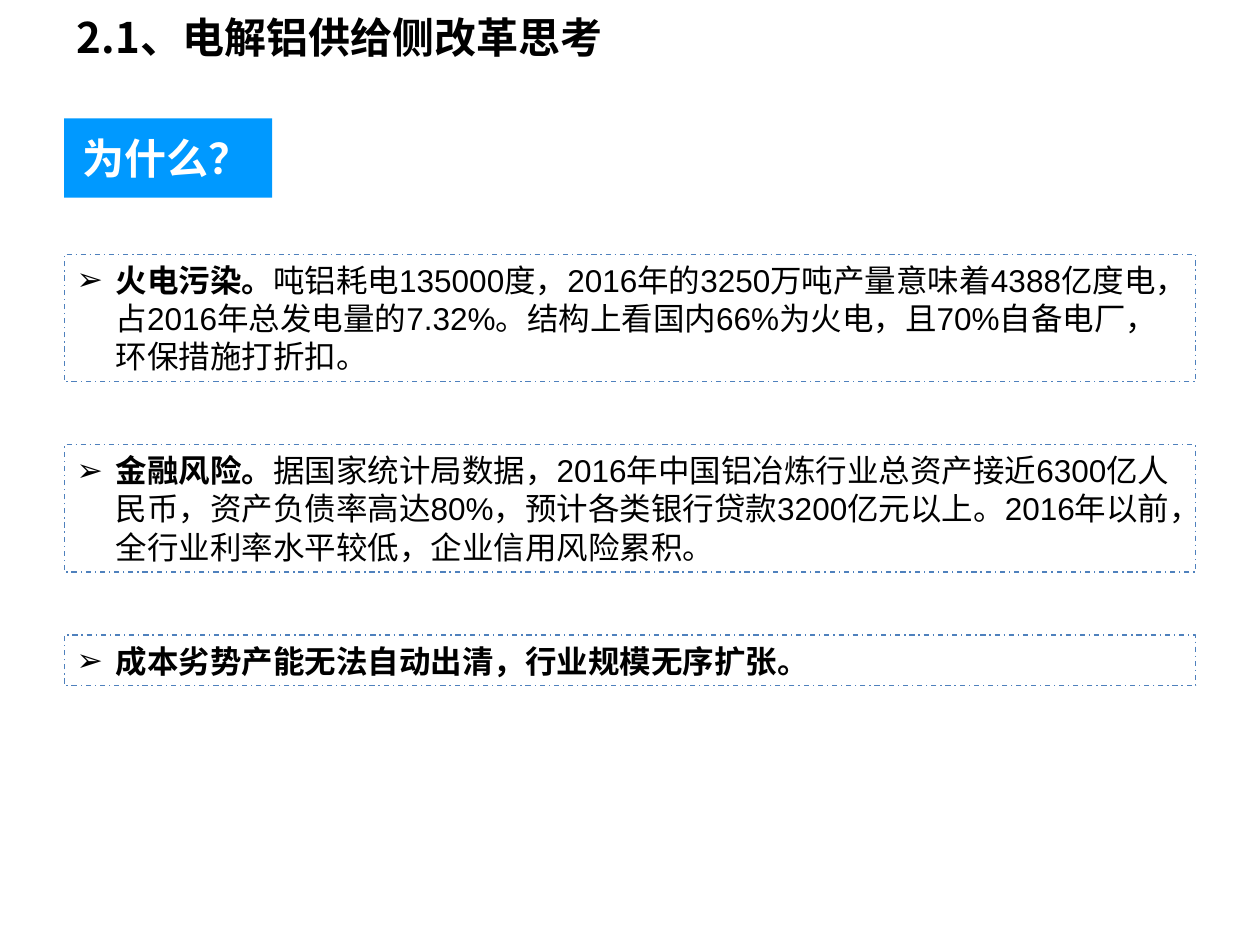
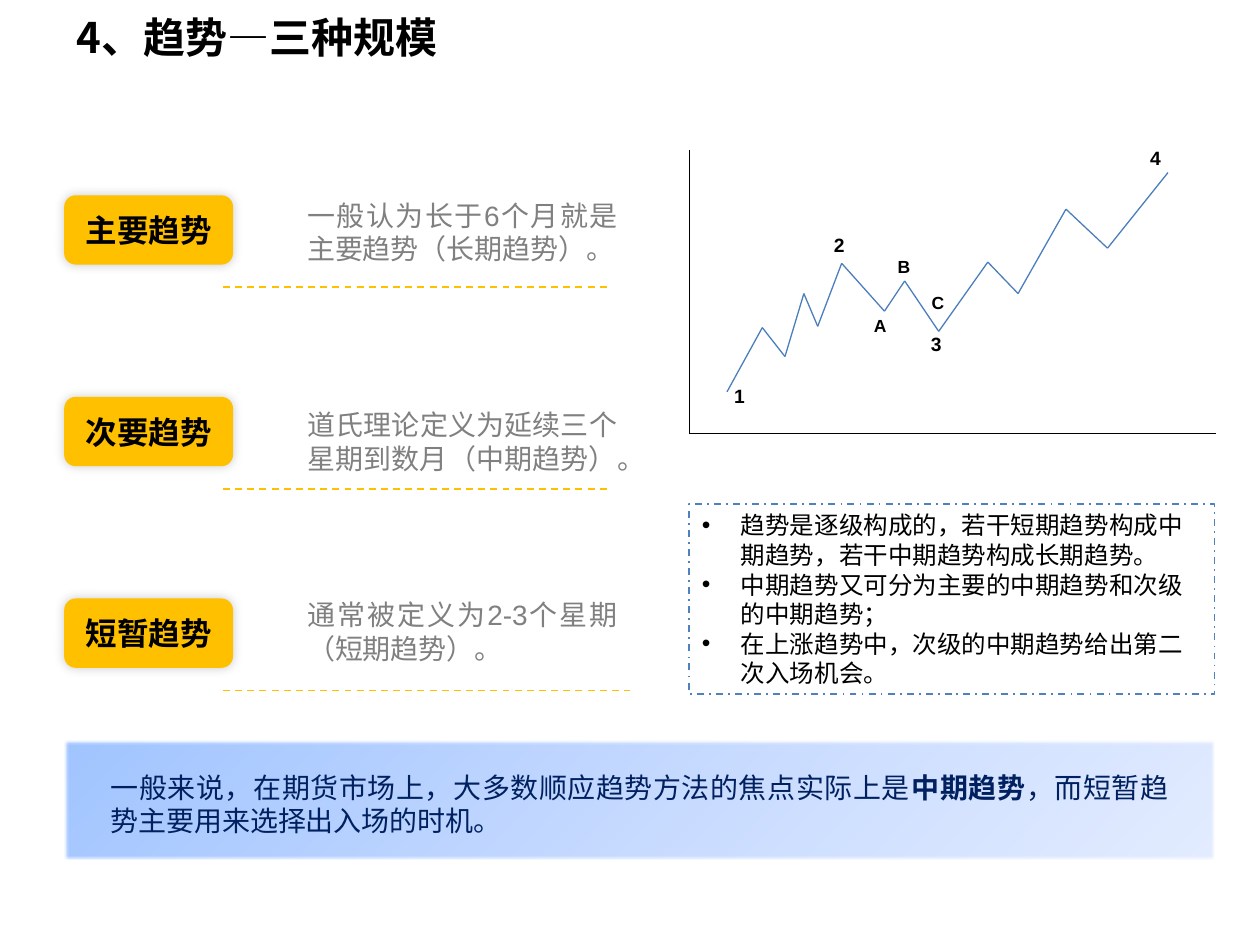
from dataclasses import dataclass
from itertools import pairwise

from lxml import etree
from pptx import Presentation
from pptx import util as u
from pptx.dml.color import RGBColor
from pptx.enum import dml, shapes, text
from pptx.oxml import ns

SCALE = 9144


@dataclass(frozen=True)
class Theme:
    """Colours, fonts and type sizes shared by the slides."""
    black: str = "000000"
    white: str = "FFFFFF"
    gray: str = "808080"
    navy: str = "002060"
    tag_blue: str = "0099FF"
    border_blue: str = "4F81BD"
    trend_blue: str = "4B7EBC"
    amber: str = "FFC000"
    gradient: tuple = ((0, "A0C4FF"), (50, "C5D9FF"), (100, "E3ECFF"))
    latin: str = "Arial"
    button: str = "Calibri"
    chinese: str = "Noto Sans CJK SC"
    title_size: int = 24
    heading_size: int = 18
    body_size: int = 16
    list_size: int = 14
    point_size: int = 11
    wave_size: int = 10
    leading: float = 1.21


THEME = Theme()
TITLE_BOX = (51, 10, 748, 39)


def px(*lengths):
    """Turn px lengths into EMU."""
    return [u.Emu(length * SCALE) for length in lengths]


def child(parent, tag, **attributes):
    """Append a DrawingML element to a parent."""
    return etree.SubElement(parent, ns.qn(tag), {key: str(value) for key, value in attributes.items()})


def write_text(frame, *paragraphs, size, color=THEME.black, font=THEME.latin, bold=False,
               align=text.PP_ALIGN.LEFT, anchor=text.MSO_ANCHOR.TOP, bullet=None,
               leading=THEME.leading, space_after=0, wrap=True):
    """Fill a text frame; parts between ** marks switch boldness."""
    frame.word_wrap = wrap
    frame.auto_size = text.MSO_AUTO_SIZE.NONE
    frame.vertical_anchor = anchor
    for index, content in enumerate(paragraphs):
        paragraph = frame.add_paragraph() if index else frame.paragraphs[0]
        if bullet:
            properties = paragraph._p.get_or_add_pPr()
            indent = 31 * SCALE
            properties.set("marL", str(indent))
            properties.set("indent", str(-indent))
            child(properties, "a:buFont", typeface=THEME.latin)
            child(properties, "a:buChar", char=bullet)
        paragraph.alignment = align
        paragraph.space_before = u.Pt(0)
        paragraph.space_after = u.Pt(space_after)
        if leading:
            paragraph.line_spacing = u.Pt(round(size * leading, 1))
        for position, part in enumerate(content.split("**")):
            if not part:
                continue
            run = paragraph.add_run()
            run.text = part
            run.font.size = u.Pt(size)
            run.font.name = font
            run.font.bold = bold != bool(position % 2)
            run.font.color.rgb = RGBColor.from_string(color)
            child(run._r.get_or_add_rPr(), "a:ea", typeface=THEME.chinese)


def set_line(line, color, width, dash=None):
    """Format an outline or a connector line."""
    line.color.rgb = RGBColor.from_string(color)
    line.width = u.Pt(width)
    if dash:
        line.dash_style = dash


def add_box(parent, box, kind=shapes.MSO_SHAPE.RECTANGLE, fill=None):
    """Add a preset shape without outline or shadow."""
    shape = parent.shapes.add_shape(kind, *px(*box))
    shape.shadow.inherit = False
    shape.line.fill.background()
    if fill:
        shape.fill.solid()
        shape.fill.fore_color.rgb = RGBColor.from_string(fill)
    else:
        shape.fill.background()
    return shape


def add_label(parent, box, *paragraphs, **style):
    """Add a text box."""
    shape = parent.shapes.add_textbox(*px(*box))
    write_text(shape.text_frame, *paragraphs, **style)


def add_path(parent, points, color, width, dash=None):
    """Join successive points with straight connectors."""
    for start, end in pairwise(points):
        connector = parent.shapes.add_connector(shapes.MSO_CONNECTOR.STRAIGHT, *px(*start, *end))
        set_line(connector.line, color, width, dash)
        child(connector._element.spPr, "a:effectLst")


def add_slide(presentation, layout, title):
    """Add a slide with the shared title style."""
    slide = presentation.slides.add_slide(presentation.slide_layouts[layout])
    shape = slide.shapes.title
    shape.left, shape.top, shape.width, shape.height = px(*TITLE_BOX)
    write_text(shape.text_frame, title, size=THEME.title_size, font=THEME.chinese, bold=True,
               anchor=text.MSO_ANCHOR.MIDDLE, leading=None)
    return slide


def question_tag(slide, box):
    """Draw the blue question tag."""
    left, top, width, height = box
    group = slide.shapes.add_group_shape()
    add_box(group, box, fill=THEME.tag_blue)
    add_label(group, (left + 5, top + 6, width - 9, height - 13), "为什么？",
              size=THEME.title_size, color=THEME.white, bold=True, wrap=False)


def reason_panels(slide, box, reasons, gap=50):
    """Stack the dashed panels, one for each reason."""
    left, top, width = box
    for height, reason in reasons:
        panel = add_box(slide, (left, top, width, height))
        set_line(panel.line, THEME.border_blue, 0.75, dml.MSO_LINE.DASH_DOT)
        write_text(panel.text_frame, reason, size=THEME.heading_size, bullet="➢", space_after=12)
        top += height + gap


def trend_row(slide, box, name, description, text_shift, rule_length):
    """Draw a trend button, its description and the dashed rule below."""
    left, top, width, height = box
    button = add_box(slide, box, shapes.MSO_SHAPE.ROUNDED_RECTANGLE, THEME.amber)
    effects = button._element.spPr.find(ns.qn("a:effectLst"))
    shadow = child(effects, "a:outerShdw", blurRad=u.Pt(6), dist=0, dir=315 * 60000)
    child(child(shadow, "a:srgbClr", val=THEME.black), "a:alpha", val=20000)
    write_text(button.text_frame, name, size=THEME.heading_size, font=THEME.button, bold=True,
               align=text.PP_ALIGN.CENTER, anchor=text.MSO_ANCHOR.MIDDLE)
    rule_left, rule_top = left + 126, top + height + 18
    add_path(slide, [(rule_left, rule_top), (rule_left + rule_length, rule_top)],
             THEME.amber, 1, dml.MSO_LINE.DASH)
    add_label(slide, (left + 183, top + text_shift, 266, 64), description,
              size=THEME.body_size, color=THEME.gray, align=text.PP_ALIGN.JUSTIFY)


def trend_sketch(slide, box):
    """Draw the axes, the zigzag trend and its turning point labels."""
    left, top, width, height = box
    group = slide.shapes.add_group_shape()
    zigzag = [(30, 192), (58, 141), (76, 164), (91, 114), (102, 140), (121, 90), (155, 128),
              (171, 104), (198, 144), (237, 89), (261, 114), (299, 47), (332, 78), (380, 18)]
    add_path(group, [(left, top), (left, top + height), (left + width, top + height)], THEME.black, 0.75)
    add_path(group, [(left + x, top + y) for x, y in zigzag], THEME.trend_blue, 0.75)
    points = [("4", 353, -8), ("2", 102, 61), ("3", 179, 140), ("1", 23, 181)]
    waves = [("A", 133, 126), ("B", 152, 79), ("C", 179, 108)]
    for labels, label_box, size in ((points, (34, 31), THEME.point_size), (waves, (37, 29), THEME.wave_size)):
        for label, x, y in labels:
            add_label(group, (left + x, top + y, *label_box), label, size=size, bold=True,
                      align=text.PP_ALIGN.CENTER, leading=None)


def trend_notes(slide, box, notes):
    """Place the bulleted notes in the body placeholder."""
    body = slide.placeholders[1]
    body.left, body.top, body.width, body.height = px(*box)
    set_line(body.line, THEME.border_blue, 1, dml.MSO_LINE.DASH_DOT)
    write_text(body.text_frame, *notes, size=THEME.list_size, bullet="•")


def summary_band(slide, box, summary):
    """Draw the gradient band with the closing remark."""
    left, top, width, height = box
    band = add_box(slide, box)
    properties = band._element.spPr
    gradient = etree.Element(ns.qn("a:gradFill"), rotWithShape="1")
    stops = child(gradient, "a:gsLst")
    for position, color in THEME.gradient:
        child(child(stops, "a:gs", pos=position * 1000), "a:srgbClr", val=color)
    child(gradient, "a:lin", ang=45 * 60000, scaled=0)
    properties.replace(properties.find(ns.qn("a:noFill")), gradient)
    child(properties.find(ns.qn("a:effectLst")), "a:softEdge", rad=u.Pt(1))
    add_label(slide, (left + 27, top + 18, width - 54, height - 30), summary,
              size=THEME.body_size, color=THEME.navy, align=text.PP_ALIGN.JUSTIFY)


def reform_slide(presentation):
    """Build the slide on the reasons for the supply reform."""
    slide = add_slide(presentation, 5, "2.1、电解铝供给侧改革思考")
    question_tag(slide, (51, 94, 165, 63))
    reason_panels(slide, (51, 202, 898), [
        (101, "**火电污染。**吨铝耗电135000度，2016年的3250万吨产量意味着4388亿度电，"
              "占2016年总发电量的7.32%。结构上看国内66%为火电，且70%自备电厂，环保措施打折扣。"),
        (101, "**金融风险。**据国家统计局数据，2016年中国铝冶炼行业总资产接近6300亿人民币，"
              "资产负债率高达80%，预计各类银行贷款3200亿元以上。2016年以前，"
              "全行业利率水平较低，企业信用风险累积。"),
        (40, "**成本劣势产能无法自动出清，行业规模无序扩张。**"),
    ])


def trend_slide(presentation):
    """Build the slide on the three scales of trend."""
    slide = add_slide(presentation, 1, "4、趋势—三种规模")
    rows = [
        ("主要趋势", "一般认为长于6个月就是主要趋势（长期趋势）。", -3, 307),
        ("次要趋势", "道氏理论定义为延续三个星期到数月（中期趋势）。", 3, 307),
        ("短暂趋势", "通常被定义为2-3个星期（短期趋势）。", -6, 323),
    ]
    for index, row in enumerate(rows):
        trend_row(slide, (51, 155 + 160 * index, 134, 55), *row)
    trend_sketch(slide, (547, 119, 418, 225))
    trend_notes(slide, (547, 400, 417, 151), [
        "趋势是逐级构成的，若干短期趋势构成中期趋势，若干中期趋势构成长期趋势。",
        "中期趋势又可分为主要的中期趋势和次级的中期趋势；",
        "在上涨趋势中，次级的中期趋势给出第二次入场机会。",
    ])
    summary_band(slide, (51, 588, 913, 94),
                 "一般来说，在期货市场上，大多数顺应趋势方法的焦点实际上是**中期趋势**，"
                 "而短暂趋势主要用来选择出入场的时机。")


def main():
    """Build and save the presentation."""
    presentation = Presentation()
    presentation.slide_width, presentation.slide_height = px(1000, 750)
    reform_slide(presentation)
    trend_slide(presentation)
    presentation.save("out.pptx")


if __name__ == "__main__":
    main()
